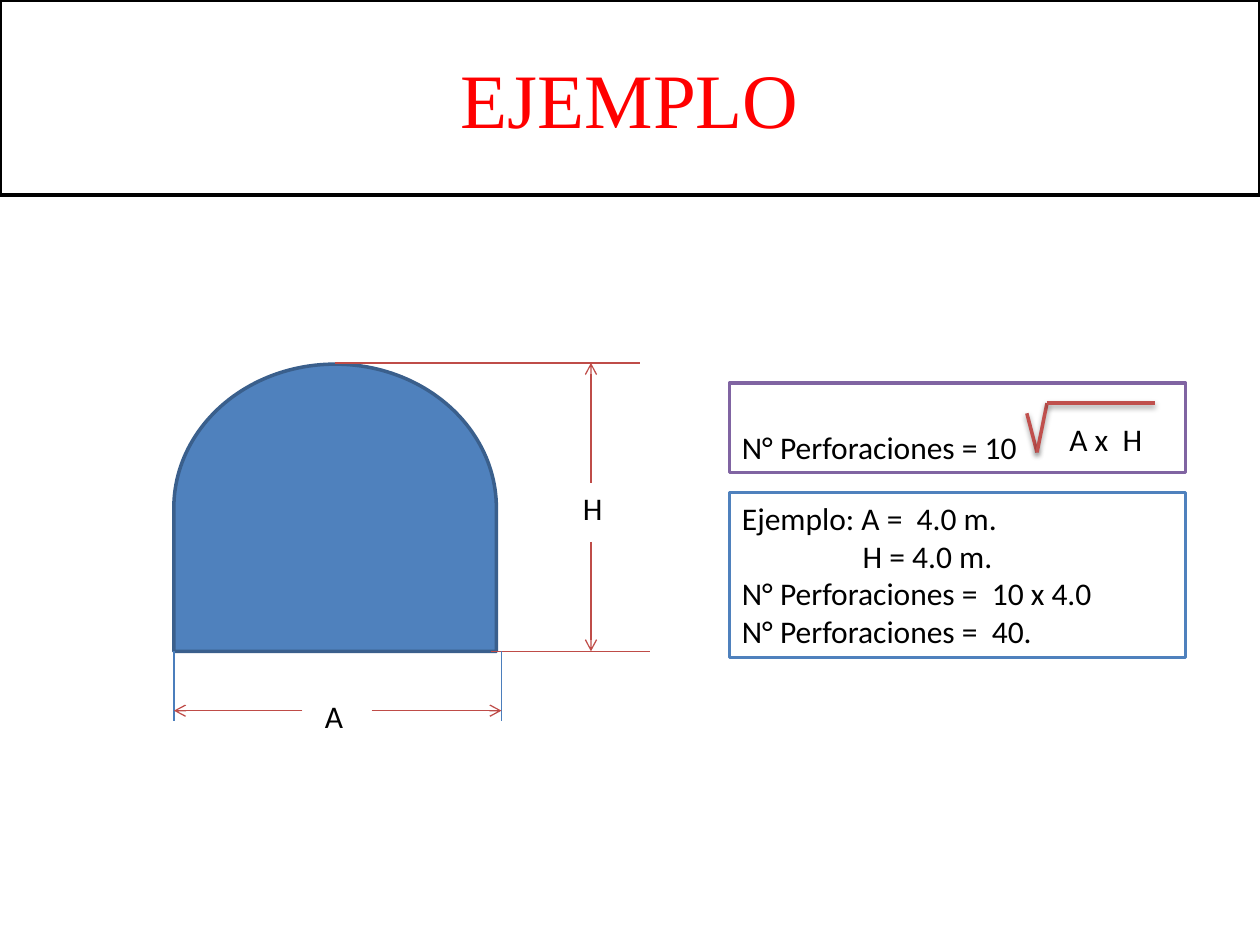
from lxml import etree
from pptx import Presentation
from pptx import util as u
from pptx.dml.color import RGBColor
from pptx.enum import shapes, text
from pptx.oxml.ns import qn

Pt = u.Pt
COLORS = {
    "white": "FFFFFF", "black": "000000", "title": "FF0000",
    "tunnel": "4F81BD", "tunnel_edge": "3A5F8C", "dimension": "BF4C48",
    "extension": "4B7EBC", "root": "C0504D", "formula": "8064A2",
}
BODY_FONT = "Calibri"

TITLE = "EJEMPLO"
# Each line of text: wording, left indent
FORMULA = [("N° Perforaciones = 10", 0)]
EXAMPLE = [
    ("Ejemplo: A =  4.0 m.", 0),
    ("H = 4.0 m.", 69),
    ("N° Perforaciones =  10 x 4.0", 0),
    ("N° Perforaciones =  40.", 0),
]
# Wording, left, top, width, height
LABELS = [
    ("H", 326, 275.8, 26, 29),
    ("A", 178.6, 394.6, 28, 29),
    ("A x  H", 604, 236.2, 57, 29),
]

# Tunnel section and its dimension axes
LEFT, RIGHT, TOP, FLOOR = 99.4, 286.6, 207.4, 372.2
HEIGHT_AXIS, WIDTH_AXIS = 337.7, 406.1
TUNNEL_BOX = (109.4, 198, 164.2, 184.3)

# Start, end, colour
GUIDES = [
    ((191.5, TOP), (365.8, TOP), "dimension"),
    ((280.8, FLOOR), (371.5, FLOOR), "dimension"),
    ((LEFT, FLOOR), (LEFT, 411.8), "extension"),
    ((RIGHT, FLOOR), (RIGHT, 411.8), "extension"),
]
ARROWS = [
    ((HEIGHT_AXIS, 309.6), (HEIGHT_AXIS, FLOOR)),
    ((HEIGHT_AXIS, 275.8), (HEIGHT_AXIS, TOP)),
    ((212.4, WIDTH_AXIS), (RIGHT, WIDTH_AXIS)),
    ((172.8, WIDTH_AXIS), (LEFT, WIDTH_AXIS)),
]
ROOT_POINTS = [(586.8, 236.2), (592.6, 258.5), (598.3, 230.4), (660.2, 230.4)]


def rgb(name):
    return RGBColor.from_string(COLORS[name])


def style_shape(shape, fill, line):
    shape.fill.solid()
    shape.fill.fore_color.rgb = rgb(fill)
    shape.line.color.rgb = rgb(line)
    shape.line.width = Pt(2)


def add_box(slide, kind, box, fill, line):
    shape = slide.shapes.add_shape(kind, *map(Pt, box))
    shape.shadow.inherit = False
    style_shape(shape, fill, line)
    return shape


def add_line(slide, start, end, color, width=0.75, arrow=False, shadow=False):
    line = slide.shapes.add_connector(
        shapes.MSO_CONNECTOR.STRAIGHT, *map(Pt, start + end))
    line.line.color.rgb = rgb(color)
    line.line.width = Pt(width)
    properties = line._element.spPr
    if arrow:
        etree.SubElement(properties.find(qn("a:ln")), qn("a:tailEnd"), type="arrow")
    effects = etree.SubElement(properties, qn("a:effectLst"))
    if shadow:
        outer = etree.SubElement(
            effects, qn("a:outerShdw"), blurRad=str(Pt(3.1)), dist=str(Pt(1.6)),
            dir="5400000", rotWithShape="0")
        black = etree.SubElement(outer, qn("a:srgbClr"), val=COLORS["black"])
        etree.SubElement(black, qn("a:alpha"), val="38000")


def write(shape, lines, anchor=text.MSO_ANCHOR.TOP, wrap=True):
    frame = shape.text_frame
    frame.word_wrap = wrap
    frame.vertical_anchor = anchor
    for index, (wording, indent) in enumerate(lines):
        paragraph = frame.add_paragraph() if index else frame.paragraphs[0]
        paragraph.alignment = text.PP_ALIGN.LEFT
        if indent:
            paragraph._p.get_or_add_pPr().set("marL", str(Pt(indent)))
        add_run(paragraph, wording, BODY_FONT, 18, "black")


def add_run(paragraph, wording, font, size, color):
    run = paragraph.add_run()
    run.text = wording
    run.font.name = font
    run.font.size = Pt(size)
    run.font.color.rgb = rgb(color)


def add_title(slide):
    title = slide.shapes.title
    title.left, title.top, title.width, title.height = map(Pt, (0, 0, 720, 111.6))
    style_shape(title, "white", "black")
    title.text_frame.vertical_anchor = text.MSO_ANCHOR.MIDDLE
    paragraph = title.text_frame.paragraphs[0]
    paragraph.alignment = text.PP_ALIGN.CENTER
    add_run(paragraph, TITLE, "Times New Roman", 44, "title")


def main():
    presentation = Presentation()
    presentation.slide_width, presentation.slide_height = Pt(720), Pt(540)
    slide = presentation.slides.add_slide(presentation.slide_layouts[5])
    add_title(slide)

    tunnel = add_box(slide, shapes.MSO_SHAPE.FLOWCHART_DELAY, TUNNEL_BOX,
                     "tunnel", "tunnel_edge")
    tunnel.rotation = 270
    for start, end, color in GUIDES:
        add_line(slide, start, end, color)
    for start, end in ARROWS:
        add_line(slide, start, end, "dimension", arrow=True)

    rectangle = shapes.MSO_SHAPE.RECTANGLE
    formula = add_box(slide, rectangle, (416.9, 218.9, 260.6, 51.1), "white", "formula")
    write(formula, FORMULA, text.MSO_ANCHOR.BOTTOM)
    example = add_box(slide, rectangle, (416.9, 281.5, 260.6, 94.3), "white", "tunnel")
    write(example, EXAMPLE)

    for start, end in zip(ROOT_POINTS, ROOT_POINTS[1:]):
        add_line(slide, start, end, "root", width=2, shadow=True)
    for wording, *box in LABELS:
        label = slide.shapes.add_textbox(*map(Pt, box))
        write(label, [(wording, 0)], wrap=False)

    presentation.save("out.pptx")


if __name__ == "__main__":
    main()
